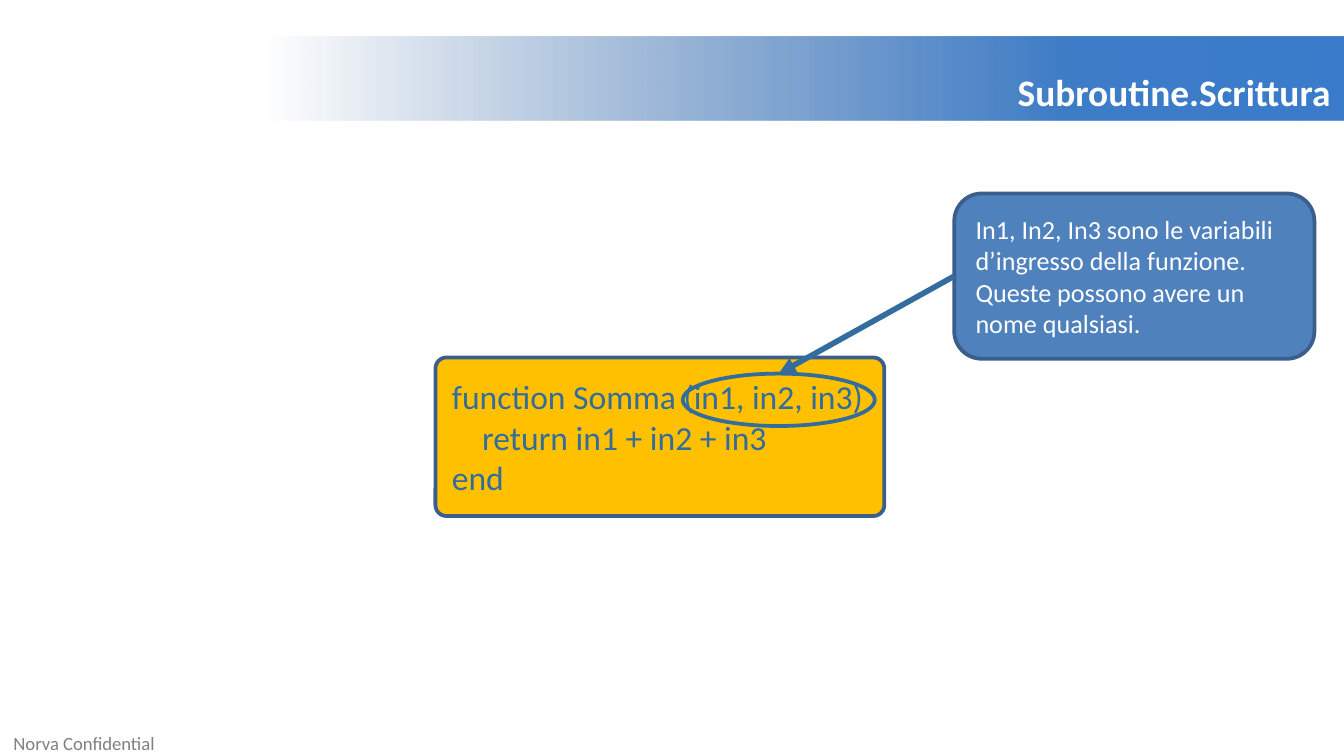
from dataclasses import dataclass

from lxml import etree
from pptx import Presentation
from pptx.dml.color import RGBColor
from pptx.enum.shapes import MSO_CONNECTOR as Connector, MSO_SHAPE as Shape
from pptx.enum.text import MSO_ANCHOR as Anchor, PP_ALIGN as Align
from pptx.oxml.ns import qn
from pptx.util import Inches, Pt


@dataclass(frozen=True)
class Theme:
    font: str = "Calibri"
    white: str = "FFFFFF"
    grey: str = "808080"
    ink: str = "336D9E"
    outline: str = "3A5F8C"
    code_fill: str = "FFC000"
    note_fill: str = "4F81BD"
    band_stops: tuple = ((20, "2F5F99", 0), (80, "3D7CC7", 100), (100, "3A7CCB", 100))
    footer_size: int = 10
    note_size: int = 14
    code_size: int = 18
    title_size: int = 20
    outline_width: int = 2
    arrow_width: int = 3


THEME = Theme()


def write_text(shape, text, *, size, color, bold=False, align=Align.LEFT,
               anchor=Anchor.MIDDLE, margin=None):
    frame = shape.text_frame
    frame.word_wrap = True
    frame.vertical_anchor = anchor
    if margin is not None:
        frame.margin_left = frame.margin_right = Inches(margin)
        frame.margin_top = frame.margin_bottom = Inches(margin)
    frame.text = text
    for paragraph in frame.paragraphs:
        paragraph.alignment = align
        paragraph.font.name = THEME.font
        paragraph.font.size = Pt(size)
        paragraph.font.bold = bold
        paragraph.font.color.rgb = RGBColor.from_string(color)


def add_shape(slide, kind, box, *, fill=None, line=None, radius=None):
    shape = slide.shapes.add_shape(kind, *map(Inches, box))
    shape.shadow.inherit = False
    if fill:
        shape.fill.solid()
        shape.fill.fore_color.rgb = RGBColor.from_string(fill)
    else:
        shape.fill.background()
    if line:
        shape.line.color.rgb = RGBColor.from_string(line)
        shape.line.width = Pt(THEME.outline_width)
    else:
        shape.line.fill.background()
    if radius is not None:
        shape.adjustments[0] = radius
    return shape


def fade_fill(shape, stops):
    shape.fill.gradient()
    shape.fill.gradient_angle = 0
    stop_list = shape._element.spPr.find(".//" + qn("a:gsLst"))
    for stop in list(stop_list):
        stop_list.remove(stop)
    for position, color, opacity in stops:
        stop = etree.SubElement(stop_list, qn("a:gs"), pos=str(position * 1000))
        color_node = etree.SubElement(stop, qn("a:srgbClr"), val=color)
        etree.SubElement(color_node, qn("a:alpha"), val=str(opacity * 1000))


def add_title_band(slide, text):
    band = add_shape(slide, Shape.RECTANGLE, (0, 0.27, 10, 0.63))
    fade_fill(band, THEME.band_stops)
    write_text(band, text, size=THEME.title_size, color=THEME.white, bold=True,
               align=Align.RIGHT, anchor=Anchor.BOTTOM)


def add_footer(slide, text):
    footer = slide.shapes.add_textbox(*map(Inches, (0.1, 5.43, 1.81, 0.2)))
    write_text(footer, text, size=THEME.footer_size, color=THEME.grey, margin=0)


def add_arrow(slide, source, source_site, target, target_site):
    arrow = slide.shapes.add_connector(Connector.STRAIGHT, 0, 0, 0, 0)
    arrow.begin_connect(source, source_site)
    arrow.end_connect(target, target_site)
    arrow.line.color.rgb = RGBColor.from_string(THEME.ink)
    arrow.line.width = Pt(THEME.arrow_width)
    etree.SubElement(arrow.line._get_or_add_ln(), qn("a:tailEnd"), type="triangle")
    etree.SubElement(arrow._element.spPr, qn("a:effectLst"))


def main():
    presentation = Presentation()
    presentation.slide_width = Inches(10)
    presentation.slide_height = presentation.slide_width * 9 // 16
    slide = presentation.slides.add_slide(presentation.slide_layouts[6])

    add_footer(slide, "Norva Confidential")
    add_title_band(slide, "Subroutine.Scrittura")

    code = add_shape(slide, Shape.ROUNDED_RECTANGLE, (3.24, 2.66, 3.34, 1.18),
                     fill=THEME.code_fill, line=THEME.outline, radius=0.07)
    write_text(code, "function Somma (in1, in2, in3)\n    return in1 + in2 + in3\nend",
               size=THEME.code_size, color=THEME.ink)

    note = add_shape(slide, Shape.ROUNDED_RECTANGLE, (7.1, 1.44, 2.68, 1.23),
                     fill=THEME.note_fill, line=THEME.outline)
    write_text(note, "In1, In2, In3 sono le variabili d’ingresso della funzione. "
               "Queste possono avere un nome qualsiasi.",
               size=THEME.note_size, color=THEME.white)

    arguments = add_shape(slide, Shape.OVAL, (5.08, 2.78, 1.43, 0.39), line=THEME.ink)
    add_arrow(slide, note, 1, arguments, 0)

    presentation.save("out.pptx")


if __name__ == "__main__":
    main()
